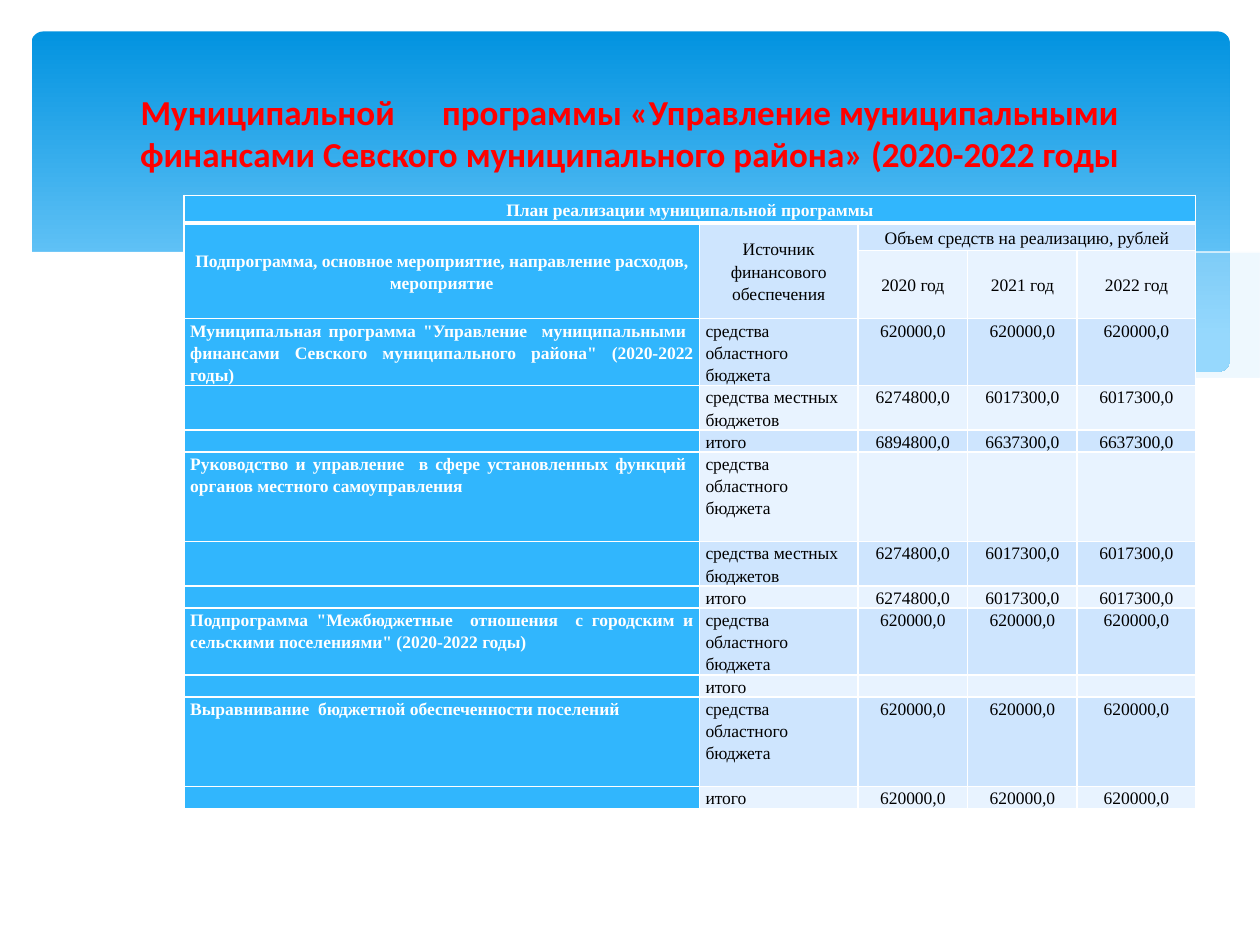
from dataclasses import dataclass

from lxml.etree import SubElement
from pptx import Presentation
from pptx.dml.color import RGBColor as Rgb
from pptx.enum.shapes import MSO_SHAPE as Shape
from pptx.enum.text import MSO_ANCHOR as Anchor, PP_ALIGN as Align
from pptx.oxml.ns import qn
from pptx.util import Inches, Pt


@dataclass(frozen=True)
class Theme:
    sky: str = "0293E0"
    pale: str = "83D3FE"
    mist: str = "C6E7FC"
    white: str = "FFFFFF"
    black: str = "000000"
    red: str = "FF0000"
    head: str = "31B6FD"
    bands: tuple = ("E8F3FF", "CEE5FE")
    sans: str = "Calibri"
    serif: str = "Times New Roman"
    title: int = 20
    body: int = 10


LOOK = Theme()

TITLE = ("Муниципальной      программы «Управление муниципальными "
         "финансами Севского муниципального района» (2020-2022 годы")

STATE = "средства областного бюджета"
LOCAL = "средства местных бюджетов"
TOTAL = "итого"
GRANT = ["620000,0"] * 3
COSTS = ["6274800,0", "6017300,0", "6017300,0"]
SUMS = ["6894800,0", "6637300,0", "6637300,0"]
NONE = [""] * 3

ROWS = [
    ["План реализации муниципальной программы", "", *NONE],
    ["Подпрограмма, основное мероприятие, направление расходов, мероприятие",
     "Источник\nфинансового\nобеспечения",
     "Объем средств на реализацию, рублей", "", ""],
    ["", "", "2020 год", "2021 год", "2022 год"],
    ['Муниципальная программа "Управление  муниципальными  финансами '
     'Севского муниципального района" (2020-2022 годы)', STATE, *GRANT],
    ["", LOCAL, *COSTS],
    ["", TOTAL, *SUMS],
    ["Руководство и управление  в сфере установленных функций  "
     "органов местного самоуправления", STATE, *NONE],
    ["", LOCAL, *COSTS],
    ["", TOTAL, *COSTS],
    ['Подпрограмма "Межбюджетные  отношения  с городским и сельскими '
     'поселениями" (2020-2022 годы)', STATE, *GRANT],
    ["", TOTAL, *NONE],
    ["Выравнивание  бюджетной обеспеченности поселений", STATE, *GRANT],
    ["", TOTAL, *GRANT],
]
WIDTHS = [4.09, 1.26, 0.87, 0.87, 0.94]
HEIGHTS = [0.22, 0.22, 0.54, 0.53, 0.35, 0.17, 0.71,
           0.35, 0.17, 0.53, 0.17, 0.71, 0.17]
SPANS = [(0, 0, 0, 4), (1, 0, 2, 0), (1, 1, 2, 1), (1, 2, 1, 4)]

RIGHT = [(9.76, 2), (9.48, 2.04), (9.21, 2.1), (8.91, 2.16), (8.61, 2.23),
         (8.05, 2.37), (7.53, 2.48), (7.06, 2.57), (6.61, 2.65), (6.91, 2.69),
         (7.19, 2.72), (7.45, 2.75), (7.69, 2.77), (8.03, 2.78), (8.35, 2.77),
         (8.63, 2.75), (8.89, 2.72), (9.13, 2.67), (9.35, 2.62), (9.49, 2.57),
         (9.63, 2.52), (9.76, 2.47)]
MIDDLE = [(8.93, 2.73), (8.66, 2.69), (8.07, 2.6), (7.41, 2.47), (6.68, 2.31),
          (6.29, 2.22), (5.98, 2.14), (5.69, 2.08), (5.41, 2.03),
          (5.14, 1.98), (4.89, 1.94), (4.42, 1.89), (3.99, 1.86),
          (3.61, 1.85), (3.28, 1.87), (2.86, 1.91), (3.23, 1.96),
          (3.62, 2.03), (4.04, 2.11), (4.49, 2.22), (4.91, 2.32), (5.3, 2.4),
          (5.66, 2.48), (6.01, 2.55), (6.34, 2.61), (6.65, 2.66), (6.95, 2.7),
          (7.22, 2.74), (7.48, 2.76), (7.85, 2.78), (8.28, 2.78),
          (8.57, 2.77), (8.76, 2.75)]
LONG = [(3.09, 1.95), (3.28, 1.92), (3.53, 1.89), (3.87, 1.87), (4.16, 1.87),
        (4.5, 1.88), (4.89, 1.9), (5.33, 1.94), (5.82, 2), (6.36, 2.08),
        (6.95, 2.19), (7.6, 2.33), (8.31, 2.51), (9.07, 2.72)]
SHORT = [(6.13, 2.57), (6.53, 2.46), (6.95, 2.35), (7.48, 2.23), (8.06, 2.1),
         (8.66, 1.99), (8.95, 1.94), (9.24, 1.9), (9.51, 1.87), (9.75, 1.85)]
FRONT = [(9.77, 2.46), (9.59, 2.53), (9.4, 2.59), (9.2, 2.65), (8.99, 2.69),
         (8.75, 2.73), (8.5, 2.75), (8.23, 2.77), (7.93, 2.76), (7.61, 2.75),
         (7.26, 2.72), (6.88, 2.68), (6.48, 2.62), (6.03, 2.54), (5.55, 2.45),
         (5.03, 2.33), (4.47, 2.2), (3.91, 2.07), (3.4, 1.97), (2.92, 1.9),
         (2.5, 1.86), (2.11, 1.84), (1.77, 1.84), (1.46, 1.85), (1.19, 1.87),
         (0.95, 1.91), (0.76, 1.95), (0.59, 1.99), (0.46, 2.03), (0.36, 2.07),
         (0.23, 2.13), (0.23, 3.29), (9.77, 3.29)]


def paint(fill, tone, alpha=100):
    fill.solid()
    fill.fore_color.rgb = Rgb.from_string(tone)
    if alpha < 100:
        node = fill._xPr.find(".//" + qn("a:srgbClr"))
        SubElement(node, qn("a:alpha"), val=str(alpha * 1000))


def style(para, face, size, tone, bold):
    for run in para.runs:
        font = run.font
        font.name, font.size, font.bold = face, Pt(size), bold
        font.color.rgb = Rgb.from_string(tone)
    for gap in para._p.findall(qn("a:br")):
        SubElement(gap, qn("a:rPr"), sz=str(size * 100))
    if not para.runs:
        SubElement(para._p, qn("a:endParaRPr"), sz=str(size * 100))


def add_panel(slide):
    panel = slide.shapes.add_shape(
        Shape.ROUNDED_RECTANGLE,
        Inches(0.25), Inches(0.25), Inches(9.51), Inches(2.7))
    panel.adjustments[0] = 0.034
    panel.shadow.inherit = False
    panel.line.fill.background()
    panel.fill.gradient()
    panel.fill.gradient_angle = 270
    parts = zip(panel.fill.gradient_stops, (0, 0.9), (LOOK.sky, LOOK.pale))
    for stop, place, tone in parts:
        stop.position = place
        stop.color.rgb = Rgb.from_string(tone)


def draw(slide, points, closed):
    pen = slide.shapes.build_freeform(*points[0], scale=Inches(1))
    pen.add_line_segments(points[1:], close=closed)
    shape = pen.convert_to_shape()
    shape.shadow.inherit = False
    return shape


def add_wave(slide, points, tone, alpha=100):
    wave = draw(slide, points, True)
    wave.line.fill.background()
    paint(wave.fill, tone, alpha)


def add_curve(slide, points):
    curve = draw(slide, points, False)
    curve.fill.background()
    paint(curve.line.fill, LOOK.white)
    curve.line.width = Pt(0)


def edge(cell, row):
    props = cell._tc.get_or_add_tcPr()
    for side in "LRTB":
        thick = (row, side) in ((0, "B"), (1, "T"))
        line = SubElement(props, qn("a:ln" + side),
                          w=str(Pt(3 if thick else 1)))
        fill = SubElement(line, qn("a:solidFill"))
        SubElement(fill, qn("a:srgbClr"), val=LOOK.white)


def fill_cell(cell, text, row, col):
    head = row == 0 or col == 0
    cell.margin_left = cell.margin_right = Inches(0.05)
    cell.margin_top = cell.margin_bottom = 0
    cell.vertical_anchor = Anchor.MIDDLE if row < 3 else Anchor.TOP
    edge(cell, row)
    paint(cell.fill, LOOK.head if head else LOOK.bands[row % 2])
    para = cell.text_frame.paragraphs[0]
    para.text = text
    sides = {0: Align.JUSTIFY, 1: Align.LEFT}
    para.alignment = Align.CENTER if row < 3 else sides.get(col, Align.CENTER)
    para.line_spacing = 1.15
    style(para, LOOK.serif, LOOK.body,
          LOOK.white if head else LOOK.black, head)


def add_plan(slide):
    table = slide.shapes.add_table(
        len(ROWS), len(WIDTHS), Inches(1.46), Inches(1.55),
        Inches(sum(WIDTHS)), Inches(sum(HEIGHTS))).table
    for col, width in zip(table.columns, WIDTHS):
        col.width = Inches(width)
    for row, height in zip(table.rows, HEIGHTS):
        row.height = Inches(height)
    for top, left, low, right in SPANS:
        table.cell(top, left).merge(table.cell(low, right))
    for row, texts in enumerate(ROWS):
        for col, text in enumerate(texts):
            fill_cell(table.cell(row, col), text, row, col)


def add_title(slide):
    frame = slide.shapes.add_textbox(
        Inches(0.5), Inches(0.37), Inches(9), Inches(1.37)).text_frame
    frame.word_wrap = True
    frame.vertical_anchor = Anchor.MIDDLE
    frame.text = TITLE
    para = frame.paragraphs[0]
    para.alignment = Align.CENTER
    style(para, LOOK.sans, LOOK.title, LOOK.red, True)


def main():
    deck = Presentation()
    deck.slide_width, deck.slide_height = Inches(10), Inches(7.5)
    slide = deck.slides.add_slide(deck.slide_layouts[6])
    add_panel(slide)
    add_wave(slide, RIGHT, LOOK.mist, 29)
    add_wave(slide, MIDDLE, LOOK.mist, 40)
    add_curve(slide, LONG)
    add_curve(slide, SHORT)
    add_wave(slide, FRONT, LOOK.white)
    add_plan(slide)
    add_title(slide)
    deck.save("out.pptx")


if __name__ == "__main__":
    main()
